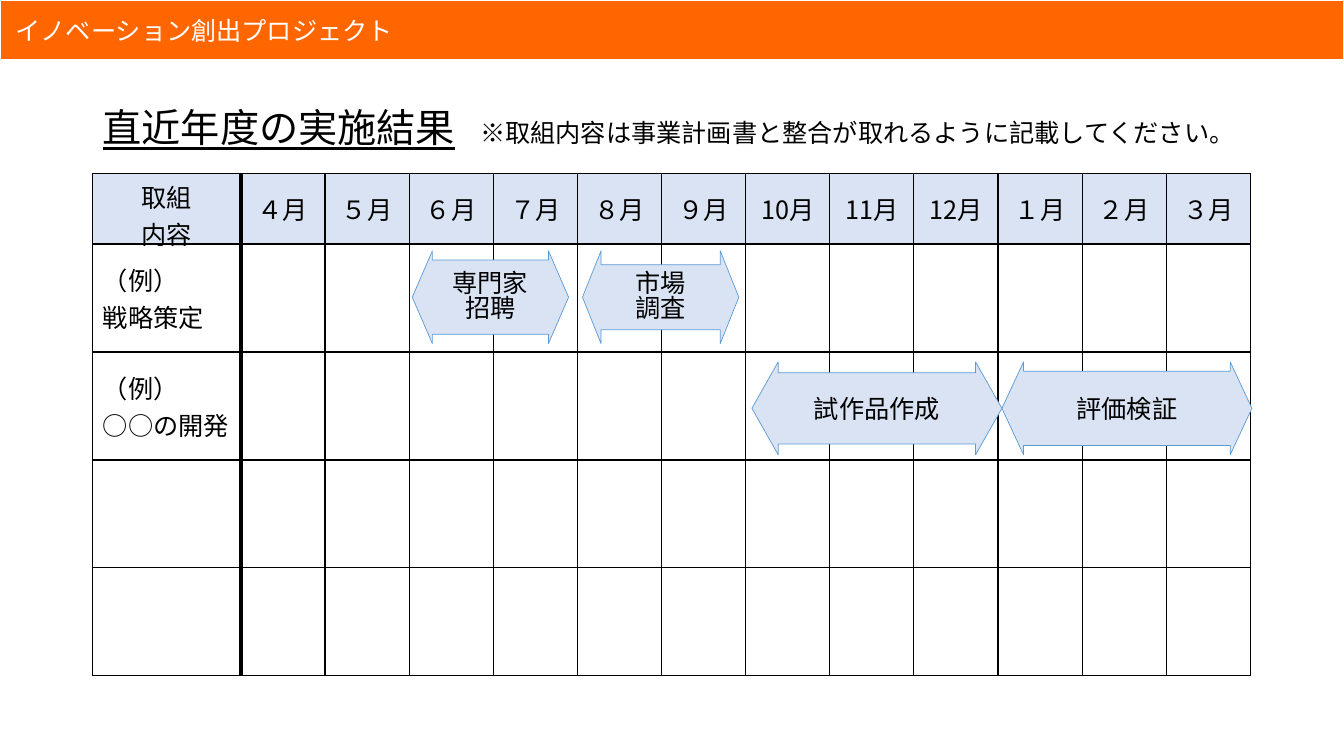
from lxml.etree import SubElement
from pptx import Presentation
from pptx.dml.color import RGBColor
from pptx.enum.shapes import MSO_SHAPE as Shape
from pptx.enum.text import MSO_ANCHOR as Anchor, PP_ALIGN as Align
from pptx.oxml import parse_xml
from pptx.oxml.ns import nsdecls, qn
from pptx.util import Cm, Pt

FONT = "Noto Sans CJK JP"
BLACK, WHITE, ORANGE, PALE, BLUE = "000000", "FFFFFF", "FF6600", "DAE3F3", "5B9BD5"
MONTHS = "４月 ５月 ６月 ７月 ８月 ９月 10月 11月 12月 １月 ２月 ３月".split()
TASKS = [["（例）", "戦略策定"], ["（例）", "○○の開発"], [], []]
ARROWS = [
    (18.95, 9.12, 6.3, (0.767, 0.283), ["試作品作成"]),
    (25.25, 9.12, 6.3, (0.8, 0.233), ["評価検証"]),
    (10.39, 6.32, 3.94, (0.8, 0.217), ["専門家", "招聘"]),
    (14.68, 6.32, 3.94, (0.7, 0.2), ["市場", "調査"]),
]


def color(value):
    """Turn a hex string into a colour."""
    return RGBColor.from_string(value)


def add_run(paragraph, text, size=18, ink=BLACK, underline=False):
    """Add one run in the slide's font."""
    run = paragraph.add_run()
    run.text = text
    run.font.name, run.font.size = FONT, Pt(size)
    run.font.color.rgb = color(ink)
    if underline:
        run.font.underline = True
    SubElement(run._r.get_or_add_rPr(), qn("a:ea"), typeface=FONT)


def write_lines(frame, lines, align=Align.LEFT, ink=BLACK, spacing=None):
    """Write each line as its own paragraph."""
    for index, line in enumerate(lines):
        paragraph = frame.add_paragraph() if index else frame.paragraphs[0]
        paragraph.alignment = align
        paragraph.line_spacing = spacing
        add_run(paragraph, line, ink=ink)


def add_box(slide, kind, place, fill, line, width):
    """Add a flat preset shape with middle-anchored text."""
    shape = slide.shapes.add_shape(kind, *map(Cm, place))
    shape.shadow.inherit = False
    shape.fill.solid()
    shape.fill.fore_color.rgb = color(fill)
    shape.line.color.rgb = color(line)
    shape.line.width = Pt(width)
    shape.text_frame.word_wrap = True
    shape.text_frame.vertical_anchor = Anchor.MIDDLE
    return shape


def add_banner(slide):
    """Add the project band across the top."""
    banner = add_box(slide, Shape.RECTANGLE, (0, 0, 33.87, 1.52), ORANGE, WHITE, 1.5)
    write_lines(banner.text_frame, [" イノベーション創出プロジェクト"], ink=WHITE)


def add_title(slide):
    """Add the underlined title and its note."""
    frame = slide.shapes.add_textbox(Cm(2.34), Cm(1.88), Cm(29.21), Cm(2.79)).text_frame
    frame.word_wrap = True
    frame.vertical_anchor = Anchor.MIDDLE
    paragraph = frame.paragraphs[0]
    paragraph.line_spacing = 0.9
    add_run(paragraph, "直近年度の実施結果", 28, underline=True)
    add_run(paragraph, "　※取組内容は事業計画書と整合が取れるように記載してください。")


def set_borders(cell, column):
    """Draw black borders, thick between the tasks and the months."""
    widths = {"L": 3 if column == 1 else 1, "R": 3 if column == 0 else 1, "T": 1, "B": 1}
    properties = cell._tc.get_or_add_tcPr()
    for index, (side, width) in enumerate(widths.items()):
        properties.insert(index, parse_xml(
            f'<a:ln{side} {nsdecls("a")} w="{Pt(width)}"><a:solidFill>'
            f'<a:srgbClr val="{BLACK}"/></a:solidFill></a:ln{side}>'))


def add_schedule(slide):
    """Add the month-by-month table."""
    rows = [[["取組", "内容"]] + [[month] for month in MONTHS]]
    rows += [[task] + [[]] * len(MONTHS) for task in TASKS]
    table = slide.shapes.add_table(
        len(rows), len(rows[0]), Cm(2.34), Cm(4.37), Cm(29.21), Cm(12.48)).table
    table.first_row = table.horz_banding = False
    for index, column in enumerate(table.columns):
        column.width = Cm(2.12 if index else 3.73)
    for row_index, row in enumerate(rows):
        table.rows[row_index].height = Cm(2.72 if row_index else 1.6)
        for column_index, lines in enumerate(row):
            cell = table.cell(row_index, column_index)
            cell.vertical_anchor = Anchor.MIDDLE
            if row_index:
                cell.fill.background()
            else:
                cell.fill.solid()
                cell.fill.fore_color.rgb = color(PALE)
            set_borders(cell, column_index)
            write_lines(cell.text_frame, lines, Align.LEFT if row_index else Align.CENTER)


def add_period(slide, left, top, width, adjustments, lines):
    """Add a double arrow spanning the months of one activity."""
    arrow = add_box(slide, Shape.LEFT_RIGHT_ARROW, (left, top, width, 2.34), PALE, BLUE, 0.5)
    for index, value in enumerate(adjustments):
        arrow.adjustments[index] = value
    spacing = 0.82 if len(lines) > 1 else None
    write_lines(arrow.text_frame, lines, Align.CENTER, spacing=spacing)


def main():
    """Build and save the slide."""
    presentation = Presentation()
    presentation.slide_width, presentation.slide_height = Cm(33.87), Cm(19.05)
    slide = presentation.slides.add_slide(presentation.slide_layouts[6])
    add_banner(slide)
    add_title(slide)
    add_schedule(slide)
    for arrow in ARROWS:
        add_period(slide, *arrow)
    presentation.save("out.pptx")


if __name__ == "__main__":
    main()
